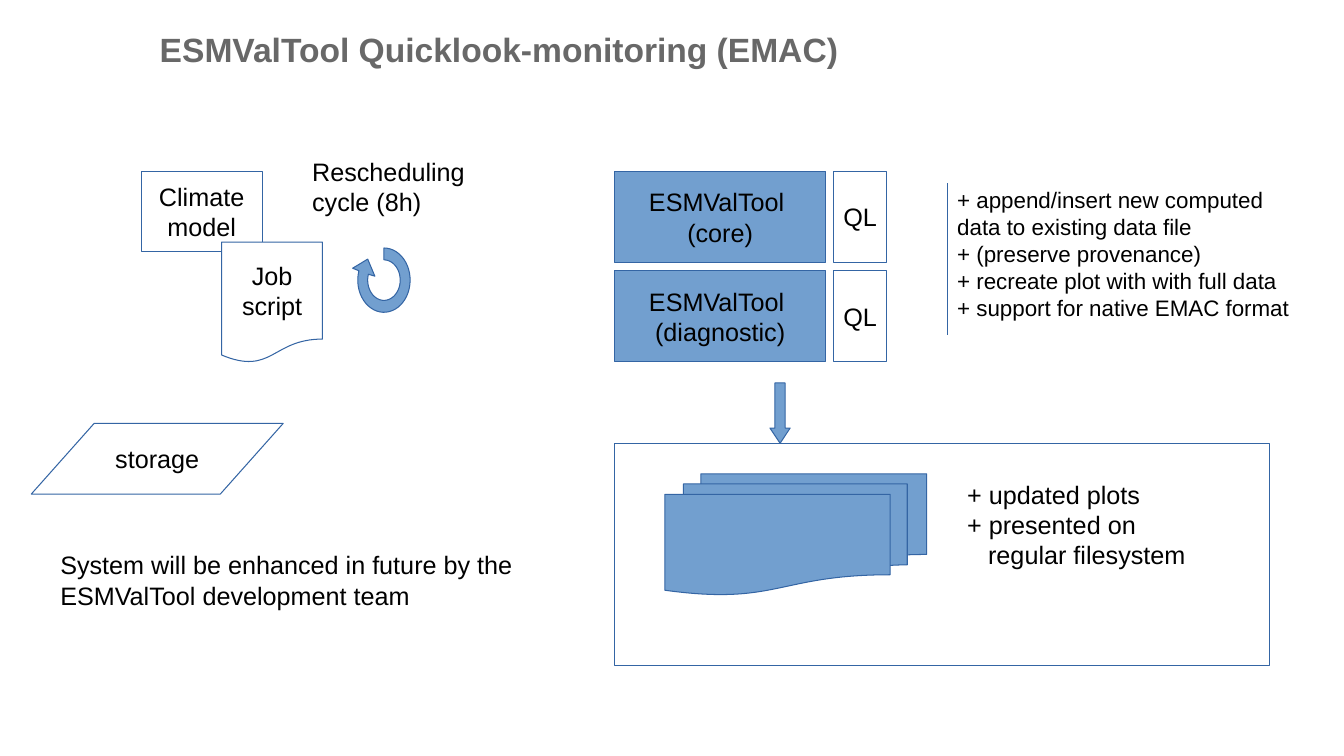
from math import cos, radians, sin

from lxml import etree
from pptx import Presentation
from pptx.dml.color import RGBColor
from pptx.enum.shapes import MSO_CONNECTOR, MSO_SHAPE
from pptx.enum.text import MSO_ANCHOR, PP_ALIGN
from pptx.oxml.ns import qn
from pptx.util import Cm, Pt

RECT = MSO_SHAPE.RECTANGLE
DOC = MSO_SHAPE.FLOWCHART_DOCUMENT
STACK = MSO_SHAPE.FLOWCHART_MULTIDOCUMENT
SLANT = MSO_SHAPE.PARALLELOGRAM
DOWN = MSO_SHAPE.DOWN_ARROW
STRAIGHT = MSO_CONNECTOR.STRAIGHT
TOP, MIDDLE = MSO_ANCHOR.TOP, MSO_ANCHOR.MIDDLE
LEFT, CENTER = PP_ALIGN.LEFT, PP_ALIGN.CENTER

BLUE, EDGE, WHITE, BLACK, GREY = "729FCF", "3465A4", "FFFFFF", "000000", "686868"
FONT = {"name": "Arial", "size": Pt(18), "bold": False}


def color(code):
    return RGBColor.from_string(code)


def apply(target, values):
    for name, value in values.items():
        setattr(target, name, value)


def write(frame, lines, align, anchor, wrap, ink=BLACK, **font):
    apply(frame, {
        "word_wrap": wrap, "vertical_anchor": anchor,
        "margin_left": Cm(0.25), "margin_right": Cm(0.25),
        "margin_top": Cm(0.13), "margin_bottom": Cm(0.13),
    })
    for i, line in enumerate(lines):
        para = frame.paragraphs[0] if i == 0 else frame.add_paragraph()
        run = para.add_run()
        run.text = line
        para.alignment = align
        apply(run.font, {**FONT, **font})
        run.font.color.rgb = color(ink)


def paint(shape, fill):
    shape.shadow.inherit = False
    shape.fill.solid()
    shape.fill.fore_color.rgb = color(fill)
    shape.line.color.rgb = color(EDGE)
    shape.line.width = Pt(0.75)


def add_box(slide, kind, box, fill, lines=(), adjust=()):
    shape = slide.shapes.add_shape(kind, *map(Cm, box))
    for i, value in enumerate(adjust):
        shape.adjustments[i] = value
    paint(shape, fill)
    write(shape.text_frame, lines, CENTER, MIDDLE, False)


def add_note(slide, box, lines, size=18):
    note = slide.shapes.add_textbox(*map(Cm, box))
    write(note.text_frame, lines, LEFT, TOP, True, size=Pt(size))
    return note


def add_rule(slide, x, top, end):
    rule = slide.shapes.add_connector(STRAIGHT, Cm(x), Cm(top), Cm(x), Cm(end))
    rule.line.color.rgb = color(EDGE)
    rule.line.width = Pt(0.75)
    etree.SubElement(rule._element.spPr, qn("a:effectLst"))


def add_cycle(slide, x, y):
    def arc(wide, high):
        return [(x + wide * cos(radians(a)), y + high * sin(radians(a)))
                for a in range(-90, 198, 7)]

    head = [(x - 0.79, y - 0.3), (x - 0.41, y - 0.53), (x - 0.23, y - 0.1)]
    points = arc(0.66, 0.81) + head + arc(0.41, 0.51)[::-1]
    points = [(Cm(px), Cm(py)) for px, py in points]
    maker = slide.shapes.build_freeform(*points[0])
    maker.add_line_segments(points[1:], close=True)
    paint(maker.convert_to_shape(), BLUE)


def add_title(slide, box, text):
    title = slide.shapes.title
    apply(title, dict(zip(("left", "top", "width", "height"), map(Cm, box))))
    write(title.text_frame, [text], CENTER, MIDDLE, True, GREY,
          size=Pt(24), bold=True)


def main():
    deck = Presentation()
    deck.slide_width, deck.slide_height = Cm(33.88), Cm(19.05)
    slide = deck.slides.add_slide(deck.slide_layouts[5])

    add_title(slide, (1.15, 0.38, 22.86, 1.7),
              "ESMValTool Quicklook-monitoring (EMAC)")
    add_box(slide, RECT, (15.49, 11.18, 16.51, 5.59), WHITE)
    add_note(slide, (7.62, 3.81, 5.08, 1.78), ["Rescheduling cycle (8h)"])
    add_box(slide, RECT, (3.56, 4.32, 3.05, 2.03), WHITE, ["Climate", "model"])
    add_box(slide, DOC, (5.59, 6.1, 2.54, 3.05), WHITE, ["Job", "script"])
    add_cycle(slide, 9.68, 7.06)

    for i, part in enumerate(("(core)", "(diagnostic)")):
        top = 4.32 + 2.5 * i
        add_box(slide, RECT, (15.49, top, 5.33, 2.29), BLUE,
                ["ESMValTool ", part])
        add_box(slide, RECT, (21.01, top, 1.35, 2.29), WHITE, ["QL"])

    add_box(slide, SLANT, (0.79, 10.67, 6.35, 1.78), WHITE, ["storage"], [0.89])
    add_note(slide, (23.88, 4.57, 9.4, 3.81), [
        "+ append/insert new computed data to existing data file",
        "+ (preserve provenance)",
        "+ recreate plot with with full data",
        "+ support for native EMAC format",
    ], 16)
    add_rule(slide, 23.88, 4.62, 8.43)
    add_box(slide, STACK, (16.76, 11.94, 6.6, 3.05), BLUE)
    add_box(slide, DOWN, (19.41, 9.65, 0.51, 1.52), BLUE, adjust=[0.5, 0.75])

    plots = add_note(slide, (24.13, 11.94, 6.86, 3.81), [
        "+ updated plots", "+ presented on", "regular filesystem"])
    last = plots.text_frame.paragraphs[-1]
    last._p.get_or_add_pPr().set("marL", str(Cm(0.53)))
    add_note(slide, (1.27, 13.72, 12.7, 2.39), [
        "System will be enhanced in future by the ESMValTool development team"])
    deck.save("out.pptx")


if __name__ == "__main__":
    main()
